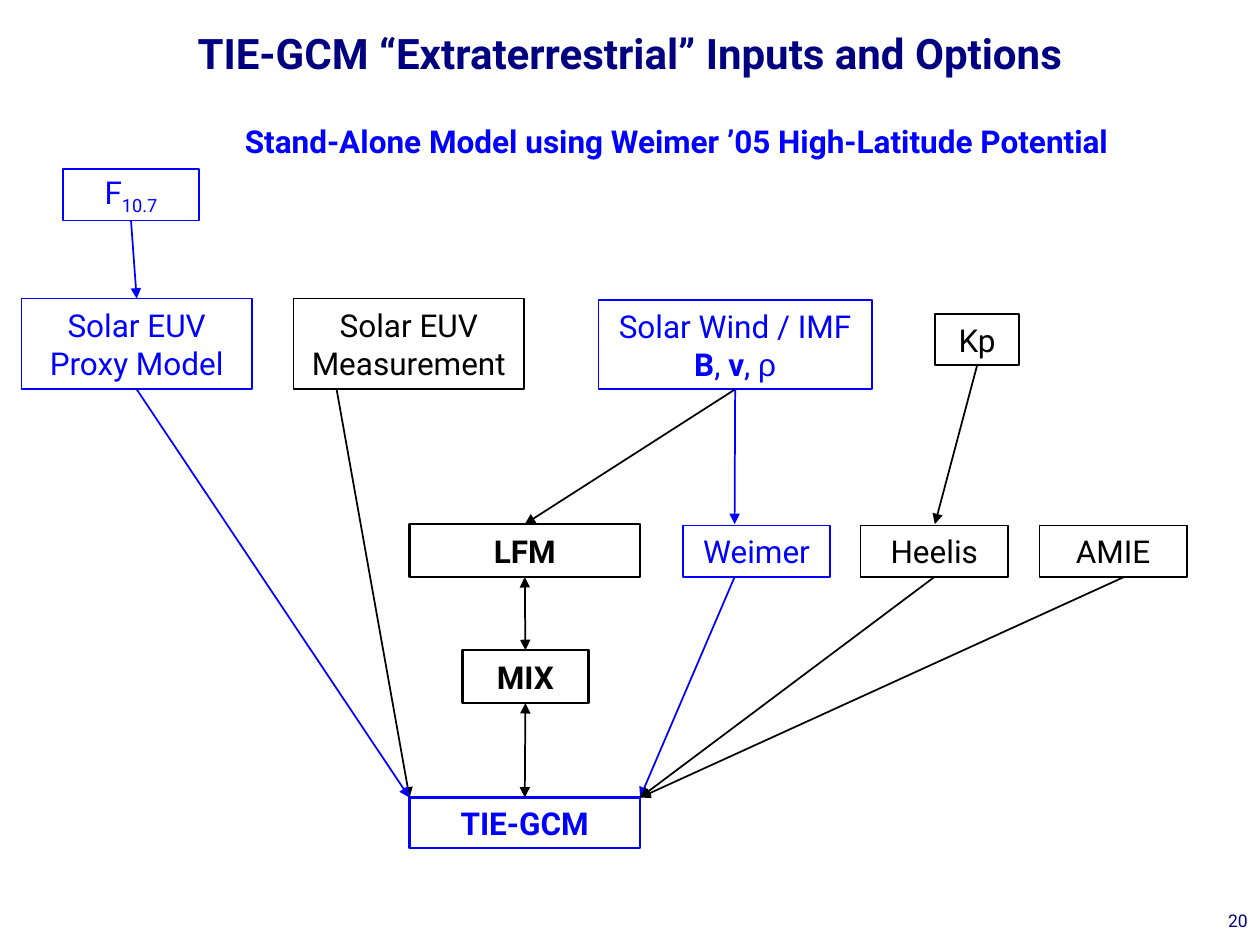
"""Build the slide of TIE-GCM inputs and options as a flow diagram."""
from lxml import etree
from pptx import Presentation
from pptx.dml.color import RGBColor
from pptx.enum.shapes import MSO_CONNECTOR, MSO_SHAPE
from pptx.enum.text import MSO_ANCHOR, MSO_AUTO_SIZE, PP_ALIGN
from pptx.oxml.ns import qn
from pptx.util import Inches, Pt

RECTANGLE, STRAIGHT = MSO_SHAPE.RECTANGLE, MSO_CONNECTOR.STRAIGHT
CENTER, RIGHT = PP_ALIGN.CENTER, PP_ALIGN.RIGHT
TOP, MIDDLE = MSO_ANCHOR.TOP, MSO_ANCHOR.MIDDLE
NO_AUTOSIZE = MSO_AUTO_SIZE.NONE
TOP_SIDE, BOTTOM_SIDE = 0, 2
BLUE, BLACK, NAVY = "0000FF", "000000", "000080"
FONT = "Roboto"

TITLE = "TIE-GCM “Extraterrestrial” Inputs and Options"
SUBTITLE = "Stand-Alone Model using Weimer ’05 High-Latitude Potential"
PAGE_NUMBER = "20"

# name: (spans as (text, style), left, top, width, height, colour, emphasised)
BOXES = {
    "TIE-GCM": ([("TIE-GCM", "")], 3.25, 6.33, 1.83, 0.4, BLUE, True),
    "LFM": ([("LFM", "")], 3.25, 4.16, 1.83, 0.42, BLACK, True),
    "MIX": ([("MIX", "")], 3.67, 5.16, 1, 0.42, BLACK, True),
    "Solar Wind": ([("Solar Wind / IMF ", ""), ("B", "bold"), (", ", ""), ("v", "bold"),
                    (", ", ""), ("ρ", "greek")], 4.75, 2.38, 2.17, 0.71, BLUE, False),
    "Kp": ([("Kp", "")], 7.42, 2.49, 0.67, 0.41, BLACK, False),
    "F10.7": ([("F", ""), ("10.7", "subscript")], 0.5, 1.34, 1.08, 0.41, BLUE, False),
    "Proxy": ([("Solar EUV Proxy Model", "")], 0.17, 2.37, 1.83, 0.72, BLUE, False),
    "Measurement": ([("Solar EUV Measurement", "")], 2.33, 2.37, 1.83, 0.72, BLACK, False),
    "Weimer": ([("Weimer", "")], 5.42, 4.17, 1.17, 0.41, BLUE, False),
    "Heelis": ([("Heelis", "")], 6.83, 4.17, 1.17, 0.41, BLACK, False),
    "AMIE": ([("AMIE", "")], 8.25, 4.17, 1.17, 0.41, BLACK, False),
}
MODEL_LEFT, MODEL_RIGHT = (3.25, 6.33), (5.08, 6.33)
ARROWS = [
    ((2.67, 3.08), MODEL_LEFT, BLACK, False),
    ("Proxy", MODEL_LEFT, BLUE, False),
    ("Solar Wind", "LFM", BLACK, False),
    ("Solar Wind", (5.83, 4.16), BLUE, False),
    ("Kp", (7.42, 4.16), BLACK, False),
    ((5.83, 4.58), MODEL_RIGHT, BLUE, False),
    ("Heelis", MODEL_RIGHT, BLACK, False),
    ("LFM", "MIX", BLACK, True),
    ("MIX", "TIE-GCM", BLACK, True),
    ("F10.7", "Proxy", BLUE, False),
    ((8.92, 4.58), MODEL_RIGHT, BLACK, False),
]


def rgb(value):
    return RGBColor.from_string(value)


def write(shape, spans, size, color, bold=False, align=CENTER, anchor=MIDDLE):
    frame = shape.text_frame
    frame.word_wrap = True
    frame.auto_size = NO_AUTOSIZE
    frame.vertical_anchor = anchor
    para = frame.paragraphs[0]
    para.alignment = align
    para.font.name, para.font.size, para.font.bold = FONT, Pt(size), bold
    para.font.color.rgb = rgb(color)
    for text, style in spans:
        span = para.add_run()
        span.text = text
        if style == "bold":
            span.font.bold = True
        elif style == "greek":
            span.font.name = "Arial"
        elif style == "subscript":
            span._r.get_or_add_rPr().set("baseline", "-25000")


def add_box(page, spans, left, top, width, height, color, emphasised):
    box = page.shapes.add_shape(RECTANGLE, *map(Inches, (left, top, width, height)))
    box.shadow.inherit = False
    box.fill.background()
    box.line.color.rgb = rgb(color)
    box.line.width = Pt(1.5 if emphasised else 1)
    write(box, spans, 18, color, emphasised)
    return box


def add_arrow(page, boxes, start, end, color, both_ways):
    points = [(0, 0) if isinstance(point, str) else point for point in (start, end)]
    arrow = page.shapes.add_connector(STRAIGHT, *(Inches(v) for point in points for v in point))
    if start in boxes:
        arrow.begin_connect(boxes[start], BOTTOM_SIDE)
    if end in boxes:
        arrow.end_connect(boxes[end], TOP_SIDE)
    arrow.line.color.rgb = rgb(color)
    arrow.line.width = Pt(1)
    line = arrow.line._get_or_add_ln()
    for tag in ("a:headEnd", "a:tailEnd") if both_ways else ("a:tailEnd",):
        etree.SubElement(line, qn(tag), type="triangle")
    etree.SubElement(arrow._element.spPr, qn("a:effectLst"))


def add_text(page, text, left, top, width, height, *style):
    label = page.shapes.add_textbox(*map(Inches, (left, top, width, height)))
    write(label, [(text, "")], *style)


def main():
    deck = Presentation()
    deck.slide_width, deck.slide_height = Inches(10), Inches(7.5)
    page = deck.slides.add_slide(deck.slide_layouts[5])
    title = page.shapes.title
    title.left, title.top, title.width, title.height = map(Inches, (0, 0.17, 10, 0.5))
    write(title, [(TITLE, "")], 24, NAVY, True)
    boxes = {name: add_box(page, *details) for name, details in BOXES.items()}
    for arrow in ARROWS:
        add_arrow(page, boxes, *arrow)
    add_text(page, SUBTITLE, 1.58, 0.92, 7.58, 0.4, 18, BLUE, True)
    add_text(page, PAGE_NUMBER, 7.92, 7.17, 2.08, 0.33, 10, NAVY, False, RIGHT, TOP)
    deck.save("out.pptx")


if __name__ == "__main__":
    main()
